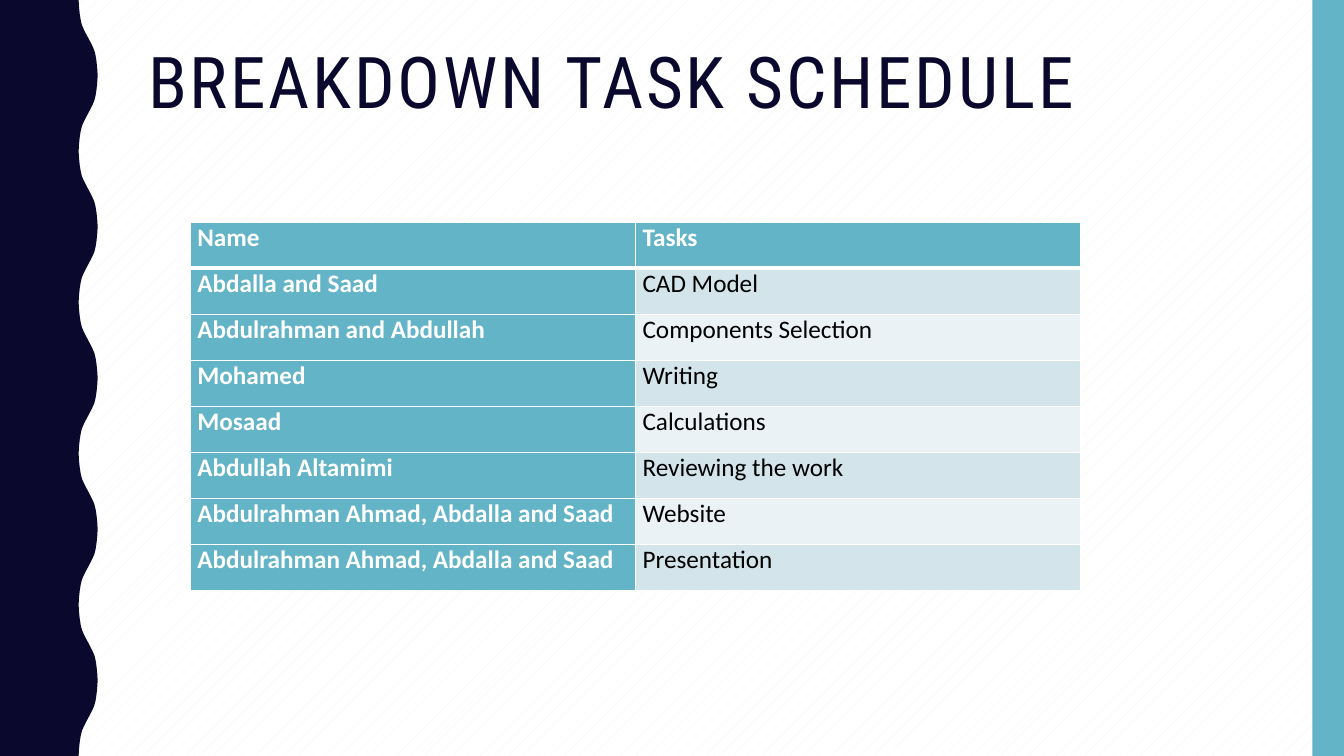
from dataclasses import dataclass

from lxml import etree
from pptx import Presentation
from pptx.dml.color import RGBColor
from pptx.enum.dml import MSO_PATTERN
from pptx.enum.shapes import MSO_SHAPE
from pptx.enum.text import MSO_ANCHOR, MSO_AUTO_SIZE, PP_ALIGN
from pptx.oxml.ns import qn
from pptx.util import Pt

RECTANGLE = MSO_SHAPE.RECTANGLE
DOTTED = MSO_PATTERN.PERCENT_5
TOP = MSO_ANCHOR.TOP
LEFT = PP_ALIGN.LEFT
NO_FIT = MSO_AUTO_SIZE.NONE


@dataclass(frozen=True)
class Theme:
    navy: str = "0B082E"
    teal: str = "62B4C6"
    band_dark: str = "D3E5EA"
    band_light: str = "EAF2F5"
    white: str = "FFFFFF"
    black: str = "000000"
    dots: str = "F3F3F2"
    title_font: str = "Roboto Condensed"
    body_font: str = "Calibri"
    title_size: float = 51
    body_size: float = 18


THEME = Theme()
SLIDE_WIDTH, SLIDE_HEIGHT = 960, 540
TASKS = [
    ("Name", "Tasks"),
    ("Abdalla and Saad", "CAD Model"),
    ("Abdulrahman and Abdullah", "Components Selection"),
    ("Mohamed", "Writing"),
    ("Mosaad", "Calculations"),
    ("Abdullah Altamimi", "Reviewing the work"),
    ("Abdulrahman Ahmad, Abdalla and Saad", "Website"),
    ("Abdulrahman Ahmad, Abdalla and Saad", "Presentation"),
]
HALF_WAVE = [
    (0, 0), (0.3, 5), (0.8, 10), (1.5, 14.4), (2.4, 18), (3.7, 21), (5.2, 24),
    (6.8, 27), (8.4, 30), (9.9, 33), (11.2, 36), (12.1, 39.6), (12.8, 44),
    (13.3, 49), (13.6, 54),
]


def apply_format(target, values):
    for name, value in values.items():
        setattr(target, name, value)


def format_font(font, name, size, color, bold):
    apply_format(font, {"name": name, "size": Pt(size), "bold": bold})
    font.color.rgb = RGBColor.from_string(color)


def paint(shape, color):
    shape.shadow.inherit = False
    shape.fill.solid()
    shape.fill.fore_color.rgb = RGBColor.from_string(color)
    shape.line.fill.background()


def add_background(slide):
    fill = slide.background.fill
    fill.patterned()
    fill.pattern = DOTTED
    fill.fore_color.rgb = RGBColor.from_string(THEME.dots)
    fill.back_color.rgb = RGBColor.from_string(THEME.white)


def add_wavy_band(slide, left, top, width, height):
    depth, half = HALF_WAVE[-1]
    edge = left + width - depth
    points = []
    for index in range(round(height / half)):
        start = top + index * half
        if index % 2 == 0:
            points += [(edge + x, start + y) for x, y in HALF_WAVE]
        else:
            points += [(edge + x, start + half - y) for x, y in reversed(HALF_WAVE)]
    points += [(edge, top + height), (left, top + height)]
    builder = slide.shapes.build_freeform(Pt(left), Pt(top))
    builder.add_line_segments([(Pt(x), Pt(y)) for x, y in points], close=True)
    paint(builder.convert_to_shape(), THEME.navy)


def add_side_bar(slide, left, top, width, height):
    bar = slide.shapes.add_shape(RECTANGLE, Pt(left), Pt(top), Pt(width), Pt(height))
    paint(bar, THEME.teal)


def add_title(slide, text, left, top, width, height):
    title = slide.shapes.title
    apply_format(title, {"left": Pt(left), "top": Pt(top),
                         "width": Pt(width), "height": Pt(height)})
    apply_format(title.text_frame, {"text": text, "word_wrap": True,
                                    "vertical_anchor": TOP, "auto_size": NO_FIT})
    paragraph = title.text_frame.paragraphs[0]
    apply_format(paragraph, {"alignment": LEFT, "line_spacing": 0.9})
    run = paragraph.runs[0]
    format_font(run.font, THEME.title_font, THEME.title_size, THEME.navy, False)
    run.font._element.set("spc", "200")


def add_borders(cell, widths):
    properties = cell._tc.get_or_add_tcPr()
    for side, width in widths.items():
        line = etree.SubElement(properties, qn(f"a:ln{side}"), w=str(Pt(width)))
        fill = etree.SubElement(line, qn("a:solidFill"))
        etree.SubElement(fill, qn("a:srgbClr"), val=THEME.white)


def cell_style(row, column):
    if row == 0 or column == 0:
        return THEME.teal, THEME.white, True
    return (THEME.band_dark if row % 2 else THEME.band_light), THEME.black, False


def add_task_table(slide, rows, left, top, width, height):
    frame = slide.shapes.add_table(len(rows), len(rows[0]),
                                   Pt(left), Pt(top), Pt(width), Pt(height))
    table = frame.table
    for table_row in table.rows:
        table_row.height = Pt(height / len(rows))
    for row, texts in enumerate(rows):
        for column, text in enumerate(texts):
            cell = table.cell(row, column)
            background, color, bold = cell_style(row, column)
            add_borders(cell, {"L": 1, "R": 1, "T": 3 if row == 1 else 1,
                               "B": 3 if row == 0 else 1})
            cell.fill.solid()
            cell.fill.fore_color.rgb = RGBColor.from_string(background)
            apply_format(cell, {"text": text, "vertical_anchor": TOP,
                                "margin_left": Pt(5), "margin_right": Pt(5),
                                "margin_top": 0, "margin_bottom": 0})
            run = cell.text_frame.paragraphs[0].runs[0]
            format_font(run.font, THEME.body_font, THEME.body_size, color, bold)


def build_schedule_slide(presentation):
    slide = presentation.slides.add_slide(presentation.slide_layouts[5])
    add_background(slide)
    add_wavy_band(slide, 0, 0, 69.8, SLIDE_HEIGHT)
    add_side_bar(slide, 937.5, 0, 22.5, SLIDE_HEIGHT)
    add_title(slide, "BREAKDOWN TASK SCHEDULE", 98.6, 30.2, 801.4, 117.4)
    add_task_table(slide, TASKS, 136, 158.8, 636, 263.2)


def main():
    presentation = Presentation()
    apply_format(presentation, {"slide_width": Pt(SLIDE_WIDTH),
                                "slide_height": Pt(SLIDE_HEIGHT)})
    build_schedule_slide(presentation)
    presentation.save("out.pptx")


if __name__ == "__main__":
    main()
